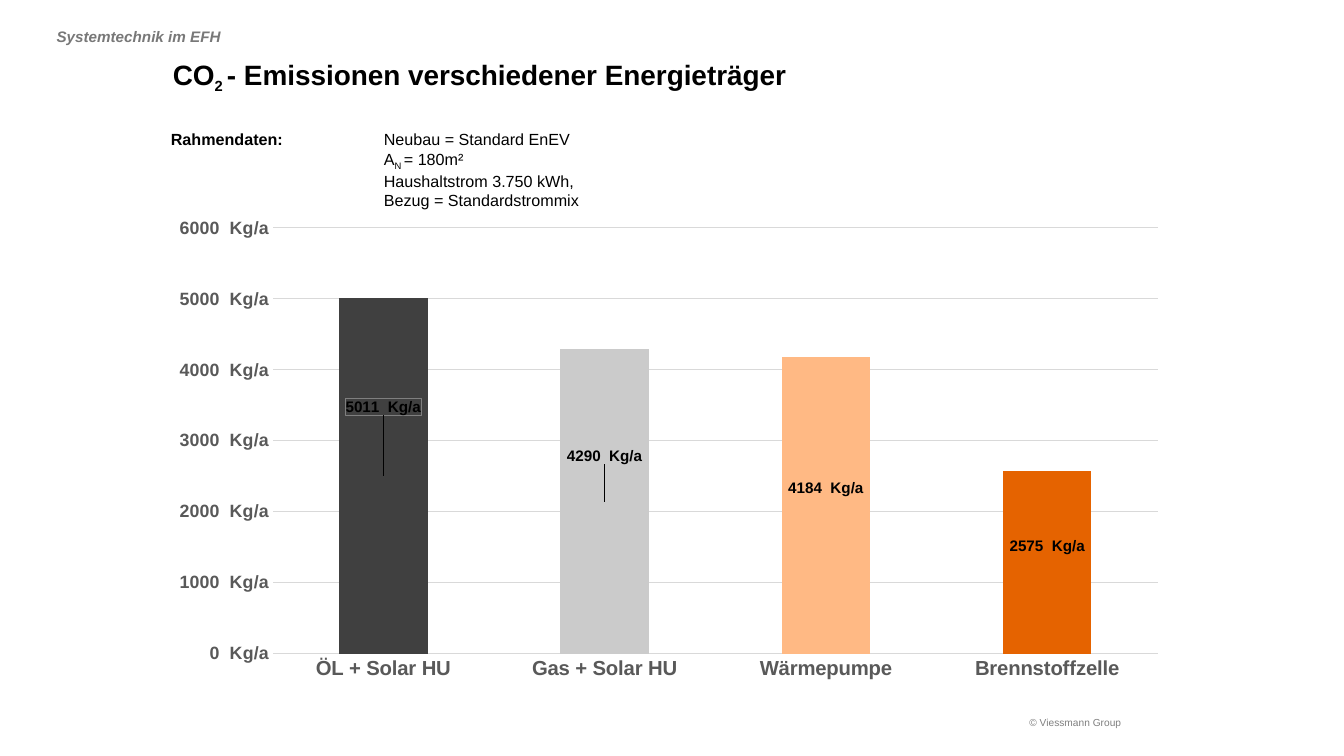
from lxml import etree
from pptx import Presentation
from pptx import util as u
from pptx.chart import data
from pptx.dml.color import RGBColor
from pptx.enum import chart as ch, text
from pptx.oxml import parse_xml
from pptx.oxml.ns import nsdecls, qn

COLORS = {"black": "000000", "heading": "787878", "footer": "7F7F7F", "axis": "595959",
          "grid": "D9D9D9", "oil": "404040", "gas": "CBCBCB", "pump": "FFB984", "cell": "E56300"}
FORMAT = '0\\ " Kg/a"'
BARS = [("ÖL + Solar HU", 5011, "oil", -0.13), ("Gas + Solar HU", 4290, "gas", -0.085),
        ("Wärmepumpe", 4184, "pump", -0.032), ("Brennstoffzelle", 2575, "cell", -0.03)]


def layout_xml(**parts):
    tags = "".join(f'<c:{k} val="{v}"/>' for k, v in parts.items())
    return parse_xml(f'<c:layout {nsdecls("c")}><c:manualLayout>{tags}</c:manualLayout></c:layout>')


class Deck:
    """Holds the style and the current slide, and draws each kind of element."""

    def __init__(self, width, height, font="Arial"):
        self.prs = Presentation()
        self.prs.slide_width, self.prs.slide_height = u.Inches(width), u.Inches(height)
        self.s = self.prs.slides.add_slide(self.prs.slide_layouts[6])
        self.font_name = font

    def color(self, name):
        return RGBColor.from_string(COLORS[name])

    def font(self, font, size, color, bold=None, italic=None):
        font.name, font.size = self.font_name, u.Pt(size)
        font.bold, font.italic = bold, italic
        font.color.rgb = self.color(color)

    def text(self, box, paragraphs, size, color="black", bold=None, italic=None,
             inset=(0.1, 0.05), anchor=text.MSO_ANCHOR.TOP, hang=0):
        tf = self.s.shapes.add_textbox(*map(u.Inches, box)).text_frame
        tf.word_wrap, tf.vertical_anchor = True, anchor
        tf.margin_left = tf.margin_right = u.Inches(inset[0])
        tf.margin_top = tf.margin_bottom = u.Inches(inset[1])
        for i, runs in enumerate(paragraphs):
            p = tf.add_paragraph() if i else tf.paragraphs[0]
            if hang:
                pPr = p._p.get_or_add_pPr()
                pPr.set("marL", str(u.Inches(hang)))
                pPr.set("indent", str(-u.Inches(hang)))
            self.font(p.font, size, color, bold, italic)
            for words, style in runs:
                r = p.add_run()
                r.text = words
                self.font(r.font, style.get("size", size), color, style.get("bold", bold), italic)
                if style.get("sub"):
                    r._r.get_or_add_rPr().set("baseline", "-25000")

    def axis(self, axis, size):
        self.font(axis.tick_labels.font, size, "axis", True)
        axis.major_tick_mark = axis.minor_tick_mark = ch.XL_TICK_MARK.NONE
        axis.format.line.fill.background()

    def label(self, point, shift, outlined):
        label = point.data_label
        self.font(label.font, 12, "black", True)
        label.position = ch.XL_LABEL_POSITION.CENTER
        dLbl = label._dLbl
        dLbl.insert(1, layout_xml(x=0, y=shift))
        number = etree.Element(qn("c:numFmt"), formatCode=FORMAT, sourceLinked="0")
        dLbl.insert(2, number)
        if outlined:
            for old in dLbl.findall(qn("c:spPr")):
                dLbl.remove(old)
            dLbl.insert(3, parse_xml(
                f'<c:spPr {nsdecls("c", "a")}><a:noFill/><a:ln w="9525"><a:solidFill>'
                f'<a:srgbClr val="{COLORS["footer"]}"/></a:solidFill></a:ln></c:spPr>'))

    def columns(self, box, bars):
        cd = data.CategoryChartData(number_format=FORMAT)
        cd.categories = [bar[0] for bar in bars]
        cd.add_series("Series 1", [bar[1] for bar in bars])
        chart = self.s.shapes.add_chart(
            ch.XL_CHART_TYPE.COLUMN_CLUSTERED, *map(u.Inches, box), cd).chart
        self.font(chart.font, 10, "black")
        chart.has_title = chart.has_legend = False
        self.axis(chart.category_axis, 16)
        values = chart.value_axis
        self.axis(values, 14)
        values.minimum_scale, values.maximum_scale, values.major_unit = 0, 6000, 1000
        values.tick_labels.number_format = FORMAT
        values.tick_labels.number_format_is_linked = False
        line = values.major_gridlines.format.line
        line.color.rgb, line.width = self.color("grid"), u.Pt(0.75)

        plot = chart.plots[0]
        plot.gap_width, plot.vary_by_categories = 150, False
        labels = plot.series[0].data_labels
        labels.show_value, labels.number_format = True, FORMAT
        labels.number_format_is_linked = False
        labels.position = ch.XL_LABEL_POSITION.CENTER
        self.font(labels.font, 12, "black", True)
        for i, (_, _, color, shift) in enumerate(bars):
            point = plot.series[0].points[i]
            point.format.fill.solid()
            point.format.fill.fore_color.rgb = self.color(color)
            self.label(point, shift, i == 0)

        area = chart._chartSpace.chart.plotArea
        for old in area.findall(qn("c:layout")):
            area.remove(old)
        area.insert(0, layout_xml(layoutTarget="inner", xMode="edge", yMode="edge",
                                  x=0.103, y=0.084, w=0.897, h=0.807))


def main():
    deck = Deck(14.7, 8.27)
    deck.text((11.26, 7.84, 1.34, 0.13), [[("© Viessmann Group", {})]], 8, "footer",
              inset=(0, 0), anchor=text.MSO_ANCHOR.BOTTOM)
    deck.columns((1.87, 2.01, 10.8, 5.77), BARS)
    deck.text((1.77, 1.37, 6.97, 0.96), [
        [("Rahmendaten:", {"bold": True}), ("\tNeubau = Standard EnEV", {})],
        [("\tA", {}), ("N ", {"sub": True}), ("= 180m²", {})],
        [("\tHaushaltstrom 3.750 kWh,", {})],
        [("\tBezug = Standardstrommix", {})]], 12.7, bold=False, hang=2.33)
    deck.text((1.89, 0.63, 10.91, 0.74), [
        [("CO", {}), ("2 ", {"size": 20, "sub": True}),
         ("- Emissionen verschiedener Energieträger", {})]], 22, bold=True, inset=(0, 0))
    deck.text((0.52, 0.25, 4.48, 0.28), [[("Systemtechnik im EFH", {})]], 12, "heading",
              bold=True, italic=True)
    deck.prs.save("out.pptx")


if __name__ == "__main__":
    main()
